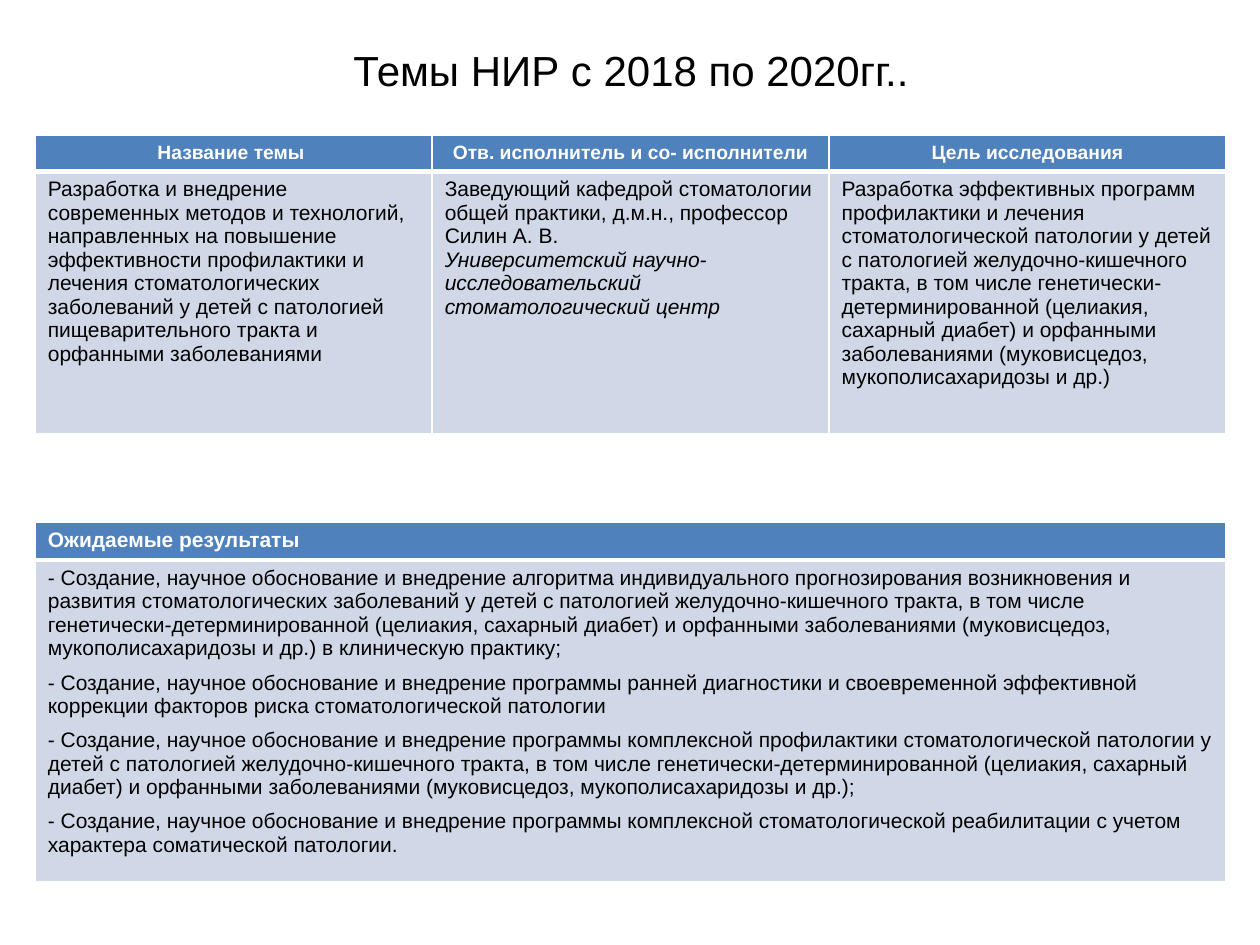
from pptx import Presentation
from pptx.dml.color import RGBColor
from pptx.enum.text import MSO_ANCHOR as Anchor, PP_ALIGN as Align
from pptx.oxml import parse_xml
from pptx.oxml.ns import nsdecls
from pptx.util import Pt

BLACK = RGBColor(0x00, 0x00, 0x00)
WHITE = RGBColor(0xFF, 0xFF, 0xFF)
BLUE = RGBColor(0x4F, 0x81, 0xBD)
PALE_BLUE = RGBColor(0xD0, 0xD8, 0xE8)

LEFT, WIDTH = 20.16, 680.4
THIN, THICK = 1, 3

THEME_HEADERS = ["Название темы ", "Отв. исполнитель и со- исполнители", "Цель исследования"]
THEME_CELLS = [
    "Разработка и внедрение современных методов и технологий, направленных на повышение "
    "эффективности профилактики и лечения стоматологических заболеваний у детей с патологией "
    "пищеварительного тракта и орфанными заболеваниями",
    "Заведующий кафедрой стоматологии общей практики, д.м.н., профессор Силин А. В.\n"
    "Университетский научно-исследовательский стоматологический центр",
    "Разработка эффективных программ профилактики и лечения стоматологической патологии у детей "
    "с патологией желудочно-кишечного тракта, в том числе генетически-детерминированной "
    "(целиакия, сахарный диабет) и орфанными заболеваниями (муковисцедоз, мукополисахаридозы и др.)",
]
RESULTS = [
    "- Создание, научное обоснование и внедрение алгоритма индивидуального прогнозирования "
    "возникновения и развития стоматологических заболеваний у детей с патологией "
    "желудочно-кишечного тракта, в том числе генетически-детерминированной (целиакия, сахарный "
    "диабет) и орфанными заболеваниями (муковисцедоз, мукополисахаридозы и др.) в клиническую практику;",
    "- Создание, научное обоснование и внедрение программы ранней диагностики и своевременной "
    "эффективной коррекции факторов риска стоматологической патологии",
    "- Создание, научное обоснование и внедрение программы комплексной профилактики "
    "стоматологической патологии у детей с патологией желудочно-кишечного тракта, в том числе "
    "генетически-детерминированной (целиакия, сахарный диабет) и орфанными заболеваниями "
    "(муковисцедоз, мукополисахаридозы и др.);",
    "- Создание, научное обоснование и внедрение программы комплексной стоматологической "
    "реабилитации с учетом характера соматической патологии.",
]


class SlideBuilder:
    font_name = "Arial"

    def __init__(self, slide):
        self.slide = slide

    def set_text(self, frame, text, size, color, align=Align.LEFT, bold=False, before=0):
        frame.text = text
        for para in frame.paragraphs:
            para.alignment = align
            para.space_before = Pt(before)
            for span in para.runs:
                font = span.font
                font.name, font.size, font.bold = self.font_name, Pt(size), bold
                font.color.rgb = color

    def title(self, text, left, top, width, height):
        box = self.slide.shapes.add_textbox(Pt(left), Pt(top), Pt(width), Pt(height))
        frame = box.text_frame
        frame.word_wrap = True
        frame.vertical_anchor = Anchor.MIDDLE
        self.set_text(frame, text, 24, BLACK, Align.CENTER)

    def borders(self, cell, top, bottom):
        """Give the cell white edges; the side edges are always thin."""
        properties = cell._tc.get_or_add_tcPr()
        edges = {"lnL": THIN, "lnR": THIN, "lnT": top, "lnB": bottom}
        for position, (edge, width) in enumerate(edges.items()):
            properties.insert(position, parse_xml(
                f'<a:{edge} {nsdecls("a")} w="{Pt(width)}"><a:solidFill>'
                f'<a:srgbClr val="{WHITE}"/></a:solidFill></a:{edge}>'))

    def table(self, top, row_heights, headers, texts, header_size, header_align, before=0):
        """Add a header row over one row of body text and return the table."""
        count = len(headers)
        table = self.slide.shapes.add_table(
            2, count, Pt(LEFT), Pt(top), Pt(WIDTH), Pt(sum(row_heights))).table
        for row, height in zip(table.rows, row_heights):
            row.height = Pt(height)
        for index, (header, text) in enumerate(zip(headers, texts)):
            table.columns[index].width = Pt(WIDTH / count)
            head, body = table.cell(0, index), table.cell(1, index)
            self.set_text(head.text_frame, header, header_size, WHITE, header_align, bold=True)
            self.set_text(body.text_frame, text, 12, BLACK, before=before)
            for cell, color in ((head, BLUE), (body, PALE_BLUE)):
                cell.fill.solid()
                cell.fill.fore_color.rgb = color
            self.borders(head, THIN, THICK)
            self.borders(body, THICK, THIN)
        return table


def main():
    deck = Presentation()
    deck.slide_width, deck.slide_height = Pt(720), Pt(540)
    builder = SlideBuilder(deck.slides.add_slide(deck.slide_layouts[6]))

    builder.title("Темы НИР с 2018 по 2020гг..", 36.72, 9.36, 648, 61.2)
    themes = builder.table(77.4, (20, 150), THEME_HEADERS, THEME_CELLS, 11, Align.CENTER)
    center_para = themes.cell(1, 1).text_frame.paragraphs[1]
    center_para.runs[0].font.italic = True
    builder.table(298.4, (20, 173), ["Ожидаемые результаты"], ["\n".join(RESULTS)],
                  12, Align.LEFT, before=6)

    deck.save("out.pptx")


if __name__ == "__main__":
    main()
